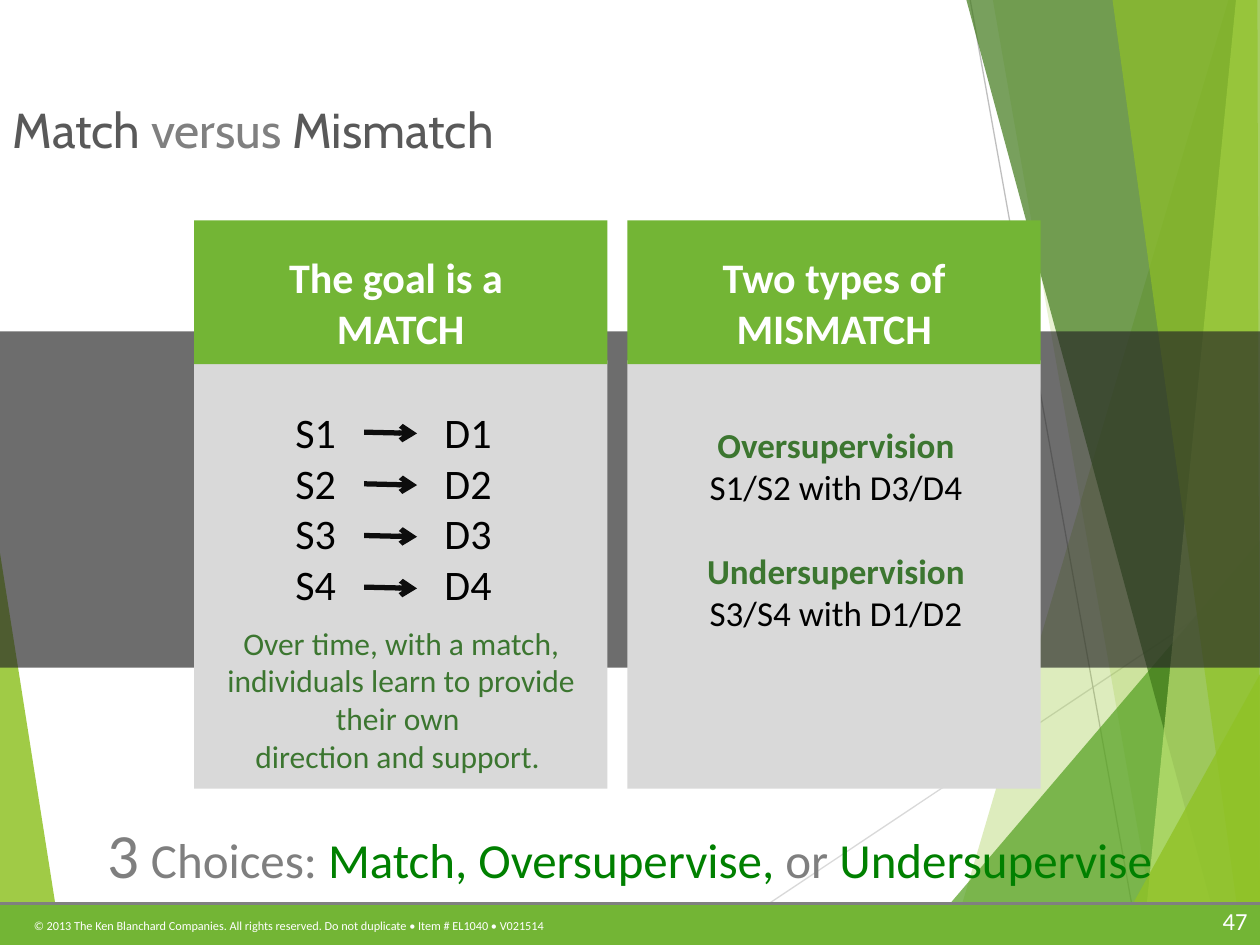
import dataclasses
import typing

import pptx
import pptx.dml.color
import pptx.enum.shapes
import pptx.enum.text
import pptx.oxml
import pptx.oxml.ns
import pptx.util

Inches = pptx.util.Inches
Align = pptx.enum.text.PP_ALIGN


@dataclasses.dataclass(frozen=True)
class Theme:
    font: str = "Calibri"
    title_font: str = "Cabin"
    white: str = "FFFFFF"
    black: str = "000000"
    leaf: str = "90C226"
    grass: str = "54A021"
    forest: str = "3F7819"
    lime: str = "C0E474"
    header: str = "73B535"
    panel: str = "D9D9D9"
    band: str = "262626"
    arrow: str = "0D0D0D"
    thin_line: str = "BFBFBF"
    gray: str = "808080"
    choice_gray: str = "7F7F7F"
    title_gray: str = "595959"
    accent: str = "3C7630"
    choice_green: str = "008000"
    notice_size: int = 7
    number_size: int = 14
    note_size: int = 18
    detail_size: int = 20
    card_size: int = 24
    heading_size: int = 28
    digit_size: int = 36


THEME = Theme()


@dataclasses.dataclass(frozen=True)
class Span:
    text: str
    size: int
    color: str
    bold: bool = False
    font: str = THEME.font


@dataclasses.dataclass(frozen=True)
class Para:
    spans: tuple[Span, ...]
    align: Align = Align.CENTER
    space_before: int = 0


@dataclasses.dataclass(frozen=True)
class Area:
    left: float
    top: float
    width: float
    height: float

    def lengths(self) -> tuple:
        return tuple(map(Inches, (self.left, self.top, self.width, self.height)))


@dataclasses.dataclass(frozen=True)
class Facet:
    points: tuple[tuple[float, float], ...]
    color: str
    opacity: int


@dataclasses.dataclass(frozen=True)
class Card:
    left: float
    heading: tuple[str, str]


CARD_WIDTH = 3.28
CARDS = (
    Card(1.54, ("The goal is a ", "MATCH")),
    Card(4.98, ("Two types of", "MISMATCH")),
)
LEFT_FACET = Facet(((0, 4.39), (0.49, 7.5), (0, 7.5)), THEME.leaf, 85)
RIGHT_FACETS = (
    Facet(((9.75, 0), (7.54, 7.5), (10, 7.5), (10, 0)), THEME.leaf, 30),
    Facet(((7.88, 0), (9.19, 7.5), (10, 7.5), (10, 0)), THEME.leaf, 20),
    Facet(((7.26, 7.5), (10, 4.29), (10, 7.5)), THEME.grass, 72),
    Facet(((7.67, 0), (9.7, 7.5), (10, 7.5), (10, 0)), THEME.forest, 70),
    Facet(((9.81, 0), (9.07, 7.5), (10, 7.5), (10, 0)), THEME.lime, 70),
    Facet(((8.83, 0), (9.86, 7.5), (10, 7.5), (9.98, 0)), THEME.leaf, 65),
    Facet(((8.81, 7.5), (10, 5.35), (10, 7.5)), THEME.leaf, 80),
)


def rgb(color: str) -> pptx.dml.color.RGBColor:
    return pptx.dml.color.RGBColor.from_string(color)


def add_child(parent: typing.Any, tag: str, **attributes: str) -> None:
    child = pptx.oxml.ns.qn(tag)
    parent.append(parent.makeelement(child, attributes))


def paint(shape: typing.Any, color: str, opacity: int = 100) -> None:
    shape.shadow.inherit = False
    shape.line.fill.background()
    shape.fill.solid()
    shape.fill.fore_color.rgb = rgb(color)
    if opacity < 100:
        choice = shape.fill._xPr.find(pptx.oxml.ns.qn("a:solidFill"))
        add_child(choice[0], "a:alpha", val=str(opacity * 1000))


def draw_facet(page: typing.Any, facet: Facet) -> None:
    points = [(Inches(x), Inches(y)) for x, y in facet.points]
    builder = page.shapes.build_freeform(*points[0])
    builder.add_line_segments(points[1:], close=True)
    paint(builder.convert_to_shape(), facet.color, facet.opacity)


def draw_box(page: typing.Any, area: Area, color: str, opacity: int = 100) -> None:
    kind = pptx.enum.shapes.MSO_SHAPE.RECTANGLE
    paint(page.shapes.add_shape(kind, *area.lengths()), color, opacity)


def draw_line(page: typing.Any, start: tuple[float, float], end: tuple[float, float],
              color: str, width: float, arrow: bool = False) -> None:
    kind = pptx.enum.shapes.MSO_CONNECTOR.STRAIGHT
    line = page.shapes.add_connector(kind, *map(Inches, start + end))
    line.line.color.rgb = rgb(color)
    line.line.width = pptx.util.Pt(width)
    if arrow:
        add_child(line.line._get_or_add_ln(), "a:tailEnd", type="arrow")
    add_child(line._element.spPr, "a:effectLst")


def write(frame: typing.Any, paras: typing.Sequence[Para]) -> None:
    frame.word_wrap = True
    frame.auto_size = pptx.enum.text.MSO_AUTO_SIZE.NONE
    frame.vertical_anchor = pptx.enum.text.MSO_ANCHOR.TOP
    for index, para in enumerate(paras):
        target = frame.add_paragraph() if index else frame.paragraphs[0]
        target.alignment = para.align
        if para.space_before:
            target.space_before = pptx.util.Pt(para.space_before)
        for span in para.spans:
            for row, text in enumerate(span.text.split("\n")):
                if row:
                    target.add_line_break()
                if text:
                    run = target.add_run()
                    run.text = text
                    run.font.name = span.font
                    run.font.size = pptx.util.Pt(span.size)
                    run.font.bold = span.bold
                    run.font.color.rgb = rgb(span.color)


def draw_text(page: typing.Any, area: Area, *paras: Para) -> None:
    write(page.shapes.add_textbox(*area.lengths()).text_frame, paras)


def draw_background(page: typing.Any) -> None:
    draw_facet(page, LEFT_FACET)
    draw_line(page, (5.61, 7.5), (10, 4.57), THEME.panel, 0.75)
    draw_line(page, (7.7, 0), (9.04, 7.5), THEME.thin_line, 0.75)
    for facet in RIGHT_FACETS:
        draw_facet(page, facet)
    draw_box(page, Area(0, 7.17, 10, 0.33), THEME.header)
    notice = ("© 2013 The Ken Blanchard Companies. All rights reserved. "
              "Do not duplicate • Item # EL1040 • V021514")
    draw_text(page, Area(0.17, 7.24, 7.53, 0.26),
              Para((Span(notice, THEME.notice_size, THEME.white),), Align.LEFT))
    draw_line(page, (0, 7.17), (10, 7.17), THEME.gray, 1.5)
    draw_text(page, Area(9.3, 7.14, 0.7, 0.34),
              Para((Span("47", THEME.number_size, THEME.white),), Align.RIGHT))
    draw_box(page, Area(0, 2.63, 10, 2.67), THEME.band, 67)


def draw_card(page: typing.Any, card: Card) -> None:
    draw_box(page, Area(card.left, 2.86, CARD_WIDTH, 3.4), THEME.panel)
    draw_box(page, Area(card.left, 1.75, CARD_WIDTH, 1.14), THEME.header)
    draw_text(page, Area(card.left, 1.95, CARD_WIDTH, 0.91),
              *(Para((Span(text, THEME.card_size, THEME.white, True),)) for text in card.heading))


def draw_matches(page: typing.Any) -> None:
    for left, letter in ((2.09, "S"), (3.3, "D")):
        draw_text(page, Area(left, 3.18, 0.83, 1.72),
                  *(Para((Span(f"{letter}{level}", THEME.card_size, THEME.black),))
                    for level in range(1, 5)))
    for level in range(4):
        height = 3.43 + 0.41 * level
        draw_line(page, (2.89, height), (3.31, height + 0.01), THEME.arrow, 3, True)
    note = "Over time, with a match,\nindividuals learn to provide\ntheir own \ndirection and support. "
    draw_text(page, Area(1.56, 4.9, 3.25, 1.31),
              Para((Span(note, THEME.note_size, THEME.accent),)))


def draw_mismatches(page: typing.Any) -> None:
    rows = (("Oversupervision\n", "S1/S2 with D3/D4", 0),
            ("Undersupervision\n", "S3/S4 with D1/D2", 24))
    draw_text(page, Area(5.15, 3.31, 2.97, 1.78),
              *(Para((Span(name, THEME.detail_size, THEME.accent, True),
                      Span(pairs, THEME.detail_size, THEME.black)), space_before=gap)
                for name, pairs, gap in rows))


def main() -> None:
    deck = pptx.Presentation()
    deck.slide_width, deck.slide_height = Inches(10), Inches(7.5)
    page = deck.slides.add_slide(deck.slide_layouts[5])
    draw_background(page)
    for card in CARDS:
        draw_card(page, card)
    draw_matches(page)
    draw_mismatches(page)
    title = page.shapes.title
    title.left, title.top, title.width, title.height = Area(0, 0.74, 9, 1.01).lengths()
    words = (("Match ", THEME.title_gray), ("versus ", THEME.gray), ("Mismatch", THEME.title_gray))
    write(title.text_frame, [Para(tuple(
        Span(text, THEME.heading_size, color, font=THEME.title_font) for text, color in words), Align.LEFT)])
    choices = ((" Choices: ", THEME.choice_gray), ("Match, Oversupervise, ", THEME.choice_green),
               ("or", THEME.choice_gray), (" Undersupervise", THEME.choice_green))
    draw_text(page, Area(0.5, 6.42, 9, 0.67),
              Para((Span("3", THEME.digit_size, THEME.choice_gray),
                    *(Span(text, THEME.heading_size, color) for text, color in choices))))
    deck.save("out.pptx")


if __name__ == "__main__":
    main()
